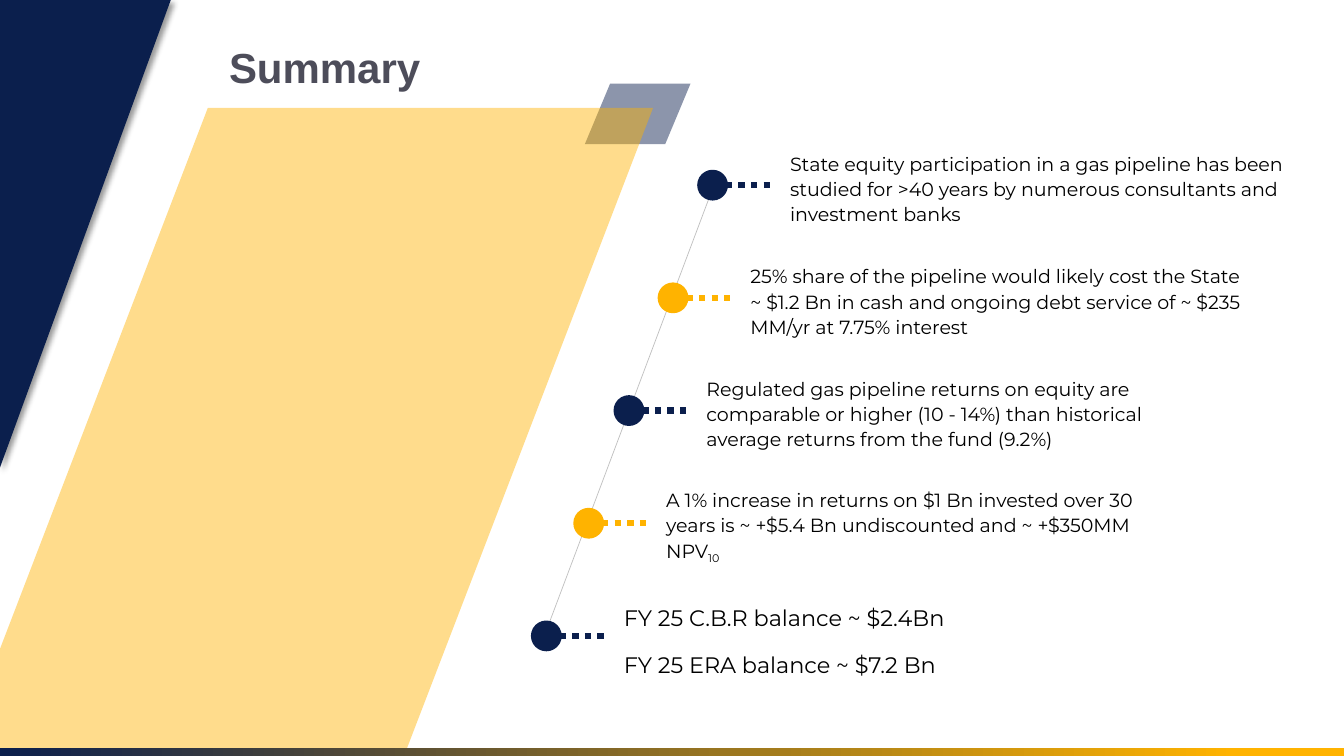
from dataclasses import dataclass

from lxml.etree import SubElement
from pptx import Presentation
from pptx.dml.color import RGBColor
from pptx.enum.shapes import MSO_CONNECTOR as Connector
from pptx.enum.shapes import MSO_SHAPE as Shape
from pptx.enum.text import MSO_ANCHOR as Anchor
from pptx.oxml.ns import qn
from pptx.util import Pt


@dataclass(frozen=True)
class Theme:
    navy: str = "0B1F4D"
    amber: str = "FFB300"
    gray: str = "BFBFBF"
    title: str = "4D4D5A"
    body: str = "000000"
    heading_font: str = "Arial"
    body_font: str = "Montserrat"
    title_size: float = 30
    point_size: float = 13.6
    balance_size: float = 16


theme = Theme()
deck = Presentation()
deck.slide_width, deck.slide_height = Pt(960), Pt(540)
page = deck.slides.add_slide(deck.slide_layouts[6])


def add_text(paragraphs, left, top, width, height, *, size, font=theme.body_font,
             color=theme.body, bold=False, spacing=1.0, gap=0):
    box = page.shapes.add_textbox(Pt(left), Pt(top), Pt(width), Pt(height))
    frame = box.text_frame
    frame.word_wrap = True
    frame.vertical_anchor = Anchor.MIDDLE
    for index, parts in enumerate(paragraphs):
        para = frame.add_paragraph() if index else frame.paragraphs[0]
        para.line_spacing = spacing
        if index:
            para.space_before = Pt(gap)
        for position, text in enumerate(parts):
            span = para.add_run()
            span.text = text
            span.font.name = font
            span.font.size = Pt(size)
            span.font.bold = bold
            span.font.color.rgb = RGBColor.from_string(color)
            if position:
                span._r.get_or_add_rPr().set("baseline", "-25000")


def paint(shape, color, opacity=100):
    shape.shadow.inherit = False
    shape.fill.solid()
    shape.fill.fore_color.rgb = RGBColor.from_string(color)
    shape.line.fill.background()
    if opacity < 100:
        tint = shape.element.spPr.find(qn("a:solidFill"))[0]
        SubElement(tint, qn("a:alpha"), val=str(opacity * 1000))


points = [
    (509, [["State equity participation in a gas pipeline has been studied for >40 years "
            "by numerous consultants and investment banks"]]),
    (480.75, [["25% share of the pipeline would likely cost the State ~ $1.2 Bn in cash "
               "and ongoing debt service of ~ $235 MM/yr at 7.75% interest"]]),
    (449.25, [["Regulated gas pipeline returns on equity are comparable or higher "
               "(10 - 14%) than historical average returns from the fund (9.2%)"]]),
    (420.5, [["A 1% increase in returns on $1 Bn invested over 30 years is ~ +$5.4 Bn "
              "undiscounted and ~ +$350MM NPV", "10"]]),
    (390.25, [["FY 25 C.B.R balance ~ $2.4Bn"], ["FY 25 ERA balance ~ $7.2 Bn"]]),
]
first_y, step_y = 132.25, 80.5
radius = 8.75
last = len(points) - 1

strokes = [(388.8, 454.3, 506.9, 140.4, theme.gray, 0.5)]
for index, (x, _) in enumerate(points):
    y = first_y + index * step_y
    color = theme.amber if index % 2 else theme.navy
    strokes.append((x + 9.5, y, x + 41.75, y, color, 4.5))

for index, (x1, y1, x2, y2, color, weight) in enumerate(strokes):
    stroke = page.shapes.add_connector(Connector.STRAIGHT, Pt(x1), Pt(y1), Pt(x2), Pt(y2))
    stroke.line.width = Pt(weight)
    stroke.line.color.rgb = RGBColor.from_string(color)
    properties = stroke.element.spPr
    if index:
        SubElement(properties.find(qn("a:ln")), qn("a:prstDash"), val="sysDot")
    SubElement(properties, qn("a:effectLst"))

for index, (x, paragraphs) in enumerate(points):
    y = first_y + index * step_y
    color = theme.amber if index % 2 else theme.navy
    marker = page.shapes.add_shape(
        Shape.OVAL, Pt(x - radius), Pt(y - radius), Pt(2 * radius), Pt(2 * radius))
    paint(marker, color)
    marker.line.color.rgb = RGBColor.from_string(color)
    marker.line.width = Pt(4.5)
    add_text(paragraphs, x + 48.25, y - 30, 368, 63.5,
             size=theme.balance_size if index == last else theme.point_size,
             spacing=1.2 if index == last else 1.1, gap=10)

corner_outline = [(0, 0), (122, 0), (0, 334)]
panel_outline = [(148.5, 77), (466.5, 77), (290.5, 535), (0, 535), (0, 463.5)]

accent = page.shapes.add_shape(Shape.PARALLELOGRAM, Pt(417.75), Pt(59.75), Pt(75.5), Pt(43.25))
accent.adjustments[0] = 0.418
paint(accent, theme.navy, 47)

for outline, color, opacity in [(corner_outline, theme.navy, 100),
                                (panel_outline, theme.amber, 45)]:
    (start_x, start_y), *rest = outline
    builder = page.shapes.build_freeform(Pt(start_x), Pt(start_y))
    builder.add_line_segments([(Pt(x), Pt(y)) for x, y in rest], close=True)
    panel = builder.convert_to_shape()
    paint(panel, color, opacity)
    if outline is corner_outline:
        effects = panel.element.spPr.find(qn("a:effectLst"))
        shadow = SubElement(effects, qn("a:outerShdw"), blurRad=str(Pt(4)), dist=str(Pt(3)),
                            dir="2700000", algn="tl", rotWithShape="0")
        shade = SubElement(shadow, qn("a:srgbClr"), val=theme.body)
        SubElement(shade, qn("a:alpha"), val="40000")

add_text([["Summary"]], 156.5, 26, 527, 43, size=theme.title_size,
         font=theme.heading_font, color=theme.title, bold=True)

footer = page.shapes.add_shape(Shape.RECTANGLE, Pt(0), Pt(534.25), Pt(960), Pt(5.75))
paint(footer, theme.navy)
footer.fill.gradient()
footer.fill.gradient_angle = 0
for stop, color, position in zip(footer.fill.gradient_stops, (theme.navy, theme.amber), (0, 0.92)):
    stop.color.rgb = RGBColor.from_string(color)
    stop.position = position

deck.save("out.pptx")
